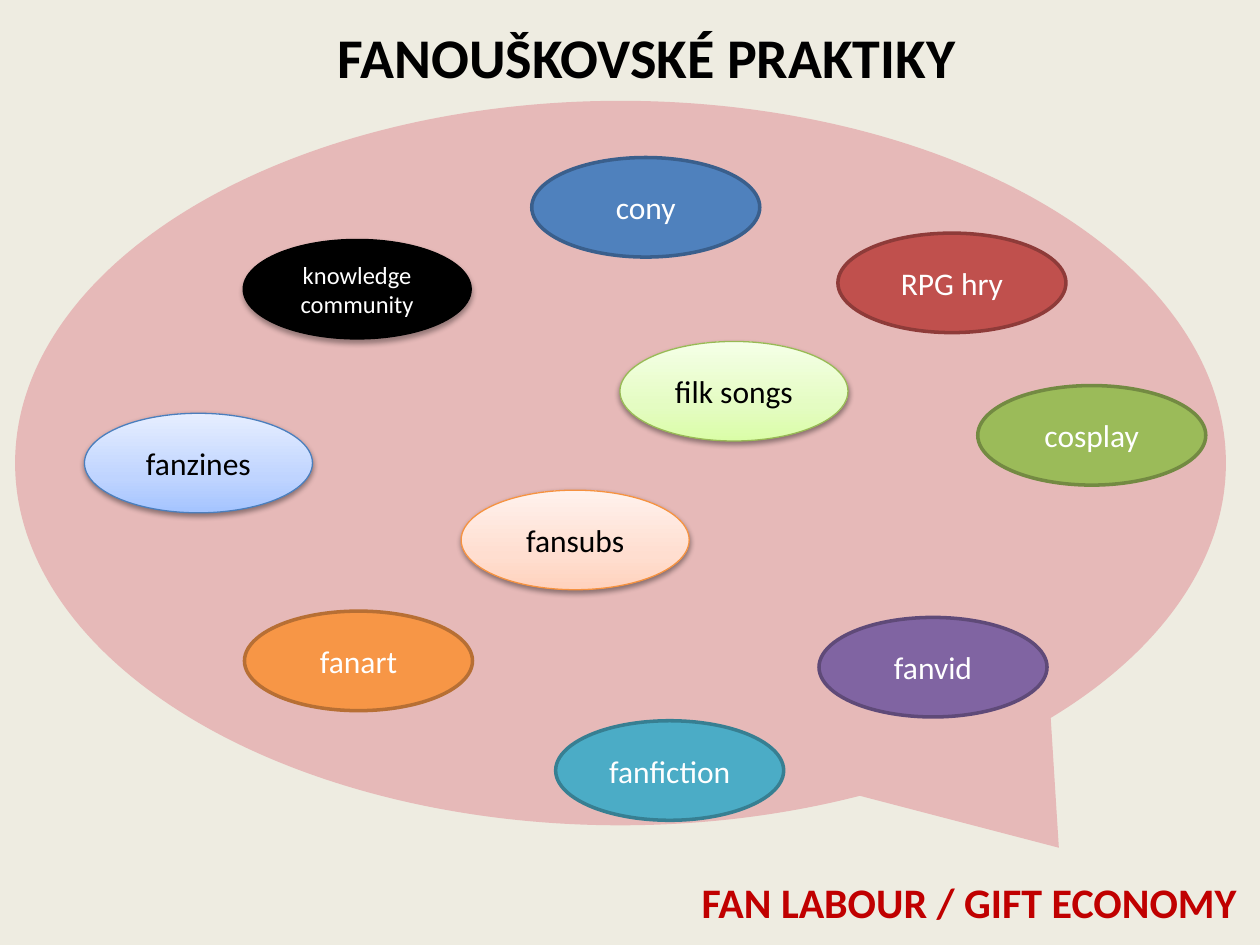
from copy import deepcopy
from dataclasses import dataclass

from lxml.etree import SubElement
from pptx import Presentation
from pptx.dml.color import RGBColor
from pptx.enum.shapes import MSO_SHAPE as Preset
from pptx.enum.text import MSO_ANCHOR as Anchor, PP_ALIGN as Align
from pptx.oxml.ns import qn
from pptx.shapes.autoshape import Shape
from pptx.slide import Slide
from pptx.text.text import TextFrame
from pptx.util import Inches, Pt

FONT = "Calibri"
BLACK, WHITE = "000000", "FFFFFF"
BUBBLE_WIDTH, BUBBLE_HEIGHT = 1.81, 0.79
STOP_POSITIONS = (0, 0.35, 1)


@dataclass(frozen=True)
class Shadow:
    opacity: int
    distance: float
    blur: float = 3.1


SOFT = Shadow(38, 1.6)


@dataclass(frozen=True)
class Practice:
    label: str
    left: float
    top: float
    fills: tuple[str, ...]
    outline: str
    outline_width: float = 2
    text_color: str = WHITE
    size: float = 18
    shadow: Shadow | None = None


def pastel(label: str, left: float, top: float,
           fills: tuple[str, ...], outline: str) -> Practice:
    return Practice(label, left, top, fills, outline, 0.75, BLACK, shadow=SOFT)


PRACTICES = (
    Practice("knowledge\ncommunity", 1.93, 1.9, (BLACK,), BLACK, 0.75,
             size=14, shadow=Shadow(35, 1.8)),
    Practice("cony", 4.22, 1.25, ("4F81BD",), "3A5F8C"),
    Practice("RPG hry", 6.65, 1.85, ("C0504D",), "8E3B39"),
    pastel("fanzines", 0.67, 3.28, ("A4C4FF", "BFD4FF", "E6EEFF"), "4B7EBC"),
    pastel("filk songs", 4.92, 2.71, ("DAFDA7", "E4FCC2", "F5FFE7"), "98B955"),
    Practice("cosplay", 7.76, 3.06, ("9BBB59",), "738A42"),
    Practice("fanart", 1.94, 4.85, ("F79646",), "B76F34"),
    Practice("fanvid", 6.5, 4.9, ("8064A2",), "5F4A78"),
    pastel("fansubs", 3.66, 3.89, ("FFD2BD", "FFDED0", "FFF2ED"), "F69240"),
    Practice("fanfiction", 4.41, 5.72, ("4BACC6",), "377F92"),
)


def rgb(color: str) -> RGBColor:
    return RGBColor.from_string(color)


def write(frame: TextFrame, text: str, size: float, color: str,
          align: Align, bold: bool = False) -> None:
    frame.word_wrap = True
    for index, line in enumerate(text.split("\n")):
        paragraph = frame.add_paragraph() if index else frame.paragraphs[0]
        paragraph.alignment = align
        run = paragraph.add_run()
        run.text = line
        run.font.name = FONT
        run.font.size = Pt(size)
        run.font.bold = bold
        run.font.color.rgb = rgb(color)


def add_heading(slide: Slide, text: str, left: float, top: float, width: float,
                height: float, size: float, color: str, align: Align) -> None:
    heading = slide.shapes.add_textbox(
        Inches(left), Inches(top), Inches(width), Inches(height))
    write(heading.text_frame, text, size, color, align, bold=True)


def paint_gradient(shape: Shape, colors: tuple[str, ...]) -> None:
    shape.fill.gradient()
    shape.fill.gradient_angle = 90
    stops = shape.element.spPr.find(".//" + qn("a:gsLst"))
    stops.append(deepcopy(stops[-1]))
    for stop, position, color in zip(
            shape.fill.gradient_stops, STOP_POSITIONS, colors):
        stop.position = position
        stop.color.rgb = rgb(color)


def cast_shadow(shape: Shape, shadow: Shadow) -> None:
    effects = shape.element.spPr.find(qn("a:effectLst"))
    outer = SubElement(effects, qn("a:outerShdw"), {
        "blurRad": str(Pt(shadow.blur)), "dist": str(Pt(shadow.distance)),
        "dir": str(90 * 60000), "rotWithShape": "0"})
    tint = SubElement(outer, qn("a:srgbClr"), val=BLACK)
    SubElement(tint, qn("a:alpha"), val=str(shadow.opacity * 1000))


def add_callout(slide: Slide) -> None:
    callout = slide.shapes.add_shape(
        Preset.OVAL_CALLOUT, Inches(0.12), Inches(0.8), Inches(9.61), Inches(5.75))
    callout.adjustments[0] = 0.362
    callout.adjustments[1] = 0.531
    callout.shadow.inherit = False
    callout.fill.solid()
    callout.fill.fore_color.rgb = rgb("E6B9B8")
    callout.line.fill.background()


def add_practice(slide: Slide, practice: Practice) -> None:
    bubble = slide.shapes.add_shape(
        Preset.OVAL, Inches(practice.left), Inches(practice.top),
        Inches(BUBBLE_WIDTH), Inches(BUBBLE_HEIGHT))
    if len(practice.fills) > 1:
        paint_gradient(bubble, practice.fills)
    else:
        bubble.fill.solid()
        bubble.fill.fore_color.rgb = rgb(practice.fills[0])
    bubble.line.color.rgb = rgb(practice.outline)
    bubble.line.width = Pt(practice.outline_width)
    bubble.shadow.inherit = False
    if practice.shadow:
        cast_shadow(bubble, practice.shadow)
    bubble.text_frame.vertical_anchor = Anchor.MIDDLE
    write(bubble.text_frame, practice.label, practice.size,
          practice.text_color, Align.CENTER)


def main() -> None:
    deck = Presentation()
    deck.slide_width, deck.slide_height = Inches(10), Inches(7.5)
    slide = deck.slides.add_slide(deck.slide_layouts[6])
    slide.background.fill.solid()
    slide.background.fill.fore_color.rgb = rgb("EEECE1")
    add_heading(slide, "FANOUŠKOVSKÉ PRAKTIKY", 0.33, 0.13, 9.61, 0.64,
                32, BLACK, Align.CENTER)
    add_callout(slide)
    add_heading(slide, "FAN LABOUR / GIFT ECONOMY", 5.47, 6.91, 4.76, 0.5,
                24, "C00000", Align.LEFT)
    for practice in PRACTICES:
        add_practice(slide, practice)
    deck.save("out.pptx")


if __name__ == "__main__":
    main()
